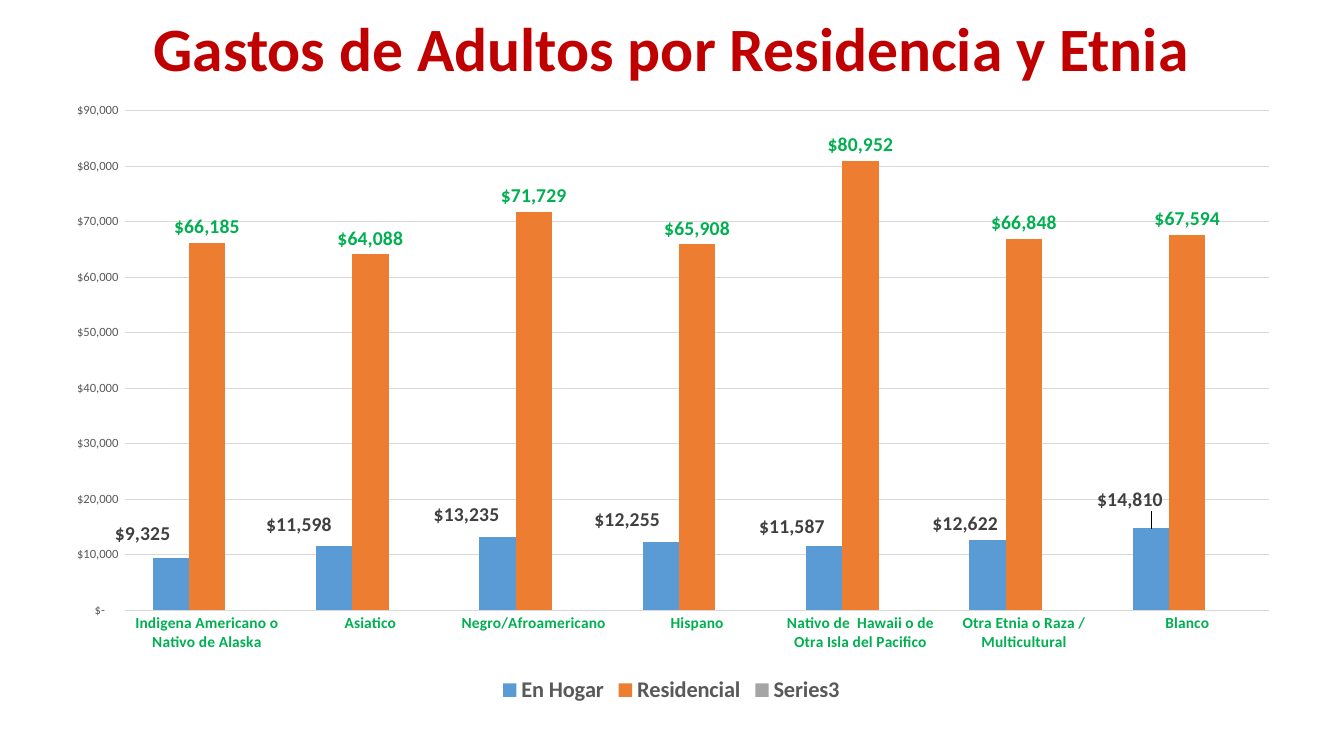
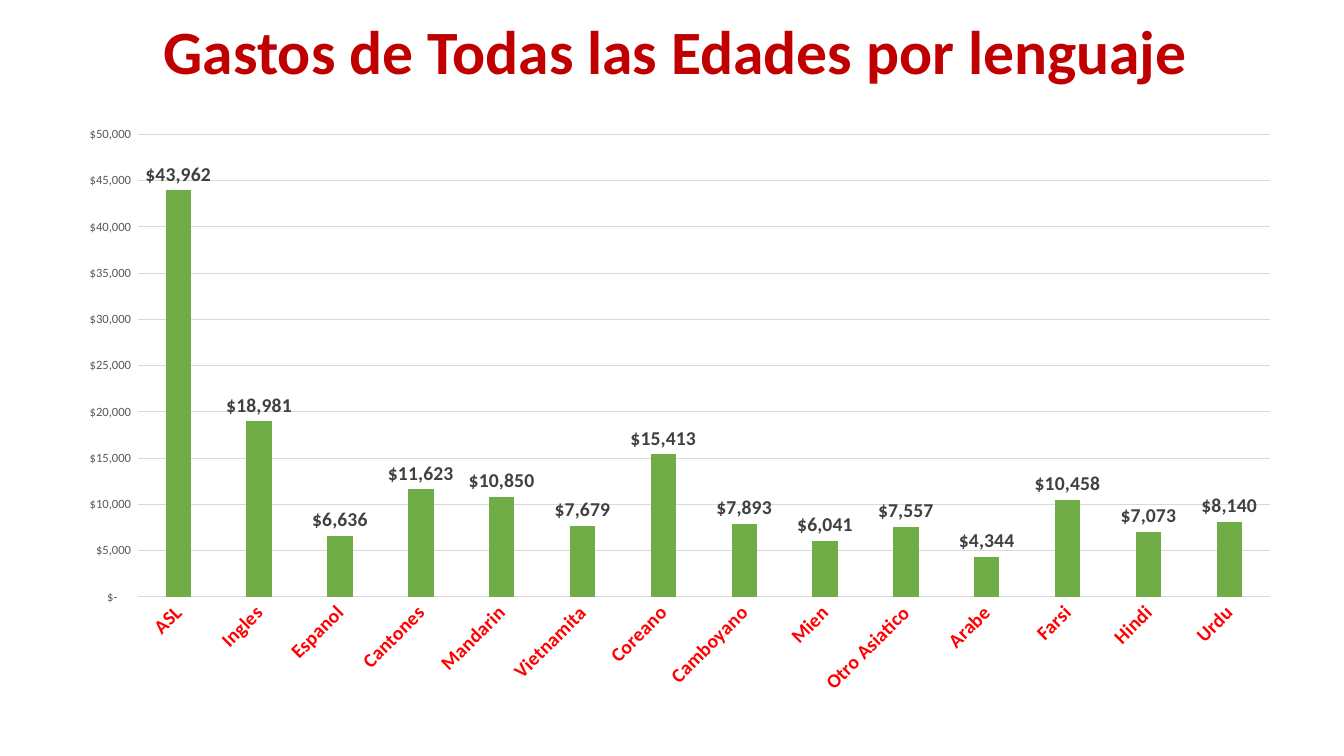
from lxml import etree
from pptx import Presentation
from pptx.chart.data import CategoryChartData
from pptx.dml.color import RGBColor
from pptx.enum import chart as charts, text
from pptx.oxml import ns
from pptx.util import Pt

FONT = "Calibri"
CRIMSON = RGBColor(0xC0, 0x00, 0x00)
RED = RGBColor(0xFF, 0x00, 0x00)
BRIGHT_GREEN = RGBColor(0x00, 0xB0, 0x50)
BLUE = RGBColor(0x5B, 0x9B, 0xD5)
ORANGE = RGBColor(0xED, 0x7D, 0x31)
GRAY = RGBColor(0xA5, 0xA5, 0xA5)
GREEN = RGBColor(0x70, 0xAD, 0x47)
DARK = RGBColor(0x40, 0x40, 0x40)
MEDIUM = RGBColor(0x59, 0x59, 0x59)
LIGHT = RGBColor(0xD9, 0xD9, 0xD9)
DOLLARS = '_("$"* #,##0_);_("$"* \\(#,##0\\);_("$"* "-"??_);_(@_)'

SLIDES = [
    {
        "title": "Gastos de Adultos por Residencia y Etnia",
        "title_box": (66, 9, 828, 56),
        "frame": (35, 65, 889, 441),
        "plot": (89.5, 79, 817, 357),
        "categories": [
            "Indigena Americano o Nativo de Alaska", "Asiatico",
            "Negro/Afroamericano", "Hispano",
            "Nativo de  Hawaii o de Otra Isla del Pacifico",
            "Otra Etnia o Raza / Multicultural", "Blanco",
        ],
        "series": [
            ("En Hogar", BLUE, DARK,
             [9325, 11598, 13235, 12255, 11587, 12622, 14810]),
            ("Residencial", ORANGE, BRIGHT_GREEN,
             [66185, 64088, 71729, 65908, 80952, 66848, 67594]),
            ("Series3", GRAY, DARK, [None] * 7),
        ],
        "label_shifts": [(-20, -6), (-25, -4), (-22, -4), (-24, -5),
                         (-23, -2), (-16, 0), (-15, -9)],
        "category_font": (11, BRIGHT_GREEN),
        "axis_line": False,
        "rotation": 0,
        "maximum": 90000,
        "step": 10000,
        "gap": 150,
        "overlap": 0,
        "legend": True,
    },
    {
        "title": "Gastos de Todas las Edades por lenguaje",
        "title_box": (69, 0, 828, 78),
        "frame": (45, 83, 881, 422),
        "plot": (98.5, 96, 808.5, 330.5),
        "categories": [
            "ASL", "Ingles", "Espanol", "Cantones", "Mandarin", "Vietnamita",
            "Coreano", "Camboyano", "Mien", "Otro Asiatico", "Arabe",
            "Farsi", "Hindi", "Urdu",
        ],
        "series": [
            ("Series 1", GREEN, DARK,
             [43962, 18981, 6636, 11623, 10850, 7679, 15413, 7893, 6041,
              7557, 4344, 10458, 7073, 8140]),
        ],
        "label_shifts": [],
        "category_font": (14, RED),
        "axis_line": True,
        "rotation": -45,
        "maximum": 50000,
        "step": 5000,
        "gap": 219,
        "overlap": -27,
        "legend": False,
    },
]


def style_font(font, size, color, bold=True):
    font.name = FONT
    font.size = Pt(size)
    font.bold = bold
    font.color.rgb = color


def place(parent, index, **settings):
    for old in parent.xpath("c:layout"):
        parent.remove(old)
    layout = etree.Element(ns.qn("c:layout"))
    manual = etree.SubElement(layout, ns.qn("c:manualLayout"))
    for name, value in settings.items():
        etree.SubElement(manual, ns.qn("c:" + name)).set("val", str(value))
    parent.insert(index, layout)


presentation = Presentation()
presentation.slide_width = Pt(960)
presentation.slide_height = Pt(540)

for content in SLIDES:
    slide = presentation.slides.add_slide(presentation.slide_layouts[6])

    title = slide.shapes.add_textbox(*map(Pt, content["title_box"])).text_frame
    title.word_wrap = True
    title.vertical_anchor = text.MSO_ANCHOR.MIDDLE
    paragraph = title.paragraphs[0]
    paragraph.text = content["title"]
    paragraph.alignment = text.PP_ALIGN.CENTER
    paragraph.line_spacing = 0.9
    style_font(paragraph.font, 44, CRIMSON)

    data = CategoryChartData(number_format=DOLLARS)
    data.categories = content["categories"]
    for name, fill, label_color, values in content["series"]:
        data.add_series(name, values)
    chart = slide.shapes.add_chart(
        charts.XL_CHART_TYPE.COLUMN_CLUSTERED,
        *map(Pt, content["frame"]), data).chart
    chart.has_title = False
    chart.font.name = FONT
    chart.font.size = Pt(10)

    left, top, width, height = content["frame"]
    plot_left, plot_top, plot_width, plot_height = content["plot"]
    place(chart.element.xpath(".//c:plotArea")[0], 0,
          layoutTarget="inner", xMode="edge", yMode="edge",
          x=(plot_left - left) / width, y=(plot_top - top) / height,
          w=plot_width / width, h=plot_height / height)

    plot = chart.plots[0]
    plot.vary_by_categories = False
    plot.gap_width = content["gap"]
    plot.overlap = content["overlap"]
    for series, (name, fill, label_color, values) in zip(
            plot.series, content["series"]):
        series.invert_if_negative = False
        series.format.fill.solid()
        series.format.fill.fore_color.rgb = fill
        labels = series.data_labels
        labels.show_value = True
        labels.number_format = DOLLARS
        labels.number_format_is_linked = False
        labels.position = charts.XL_LABEL_POSITION.OUTSIDE_END
        style_font(labels.font, 14, label_color)

    first_series = plot.series[0]
    for index, (shift_x, shift_y) in enumerate(content["label_shifts"]):
        label = first_series.points[index].data_label
        style_font(label.font, 14, DARK)
        label.position = charts.XL_LABEL_POSITION.OUTSIDE_END
        element = chart.element.xpath(".//c:dLbl")[index]
        place(element, 1, x=shift_x / width, y=shift_y / height)

    category_axis = chart.category_axis
    value_axis = chart.value_axis
    for axis in (category_axis, value_axis):
        axis.major_tick_mark = charts.XL_TICK_MARK.NONE
        axis.minor_tick_mark = charts.XL_TICK_MARK.NONE
        axis.format.line.fill.background()
    style_font(category_axis.tick_labels.font, *content["category_font"])
    if content["axis_line"]:
        category_axis.format.line.color.rgb = LIGHT
        category_axis.format.line.width = Pt(0.75)
    body = chart.element.xpath(".//c:catAx/c:txPr/a:bodyPr")[0]
    body.set("rot", str(content["rotation"] * 60000))

    style_font(value_axis.tick_labels.font, 9, MEDIUM, bold=False)
    value_axis.tick_labels.number_format = DOLLARS
    value_axis.tick_labels.number_format_is_linked = False
    value_axis.minimum_scale = 0
    value_axis.maximum_scale = content["maximum"]
    value_axis.major_unit = content["step"]
    value_axis.has_major_gridlines = True
    value_axis.major_gridlines.format.line.color.rgb = LIGHT
    value_axis.major_gridlines.format.line.width = Pt(0.75)

    chart.has_legend = content["legend"]
    if content["legend"]:
        chart.legend.position = charts.XL_LEGEND_POSITION.BOTTOM
        chart.legend.include_in_layout = False
        style_font(chart.legend.font, 16, MEDIUM)

presentation.save("out.pptx")
